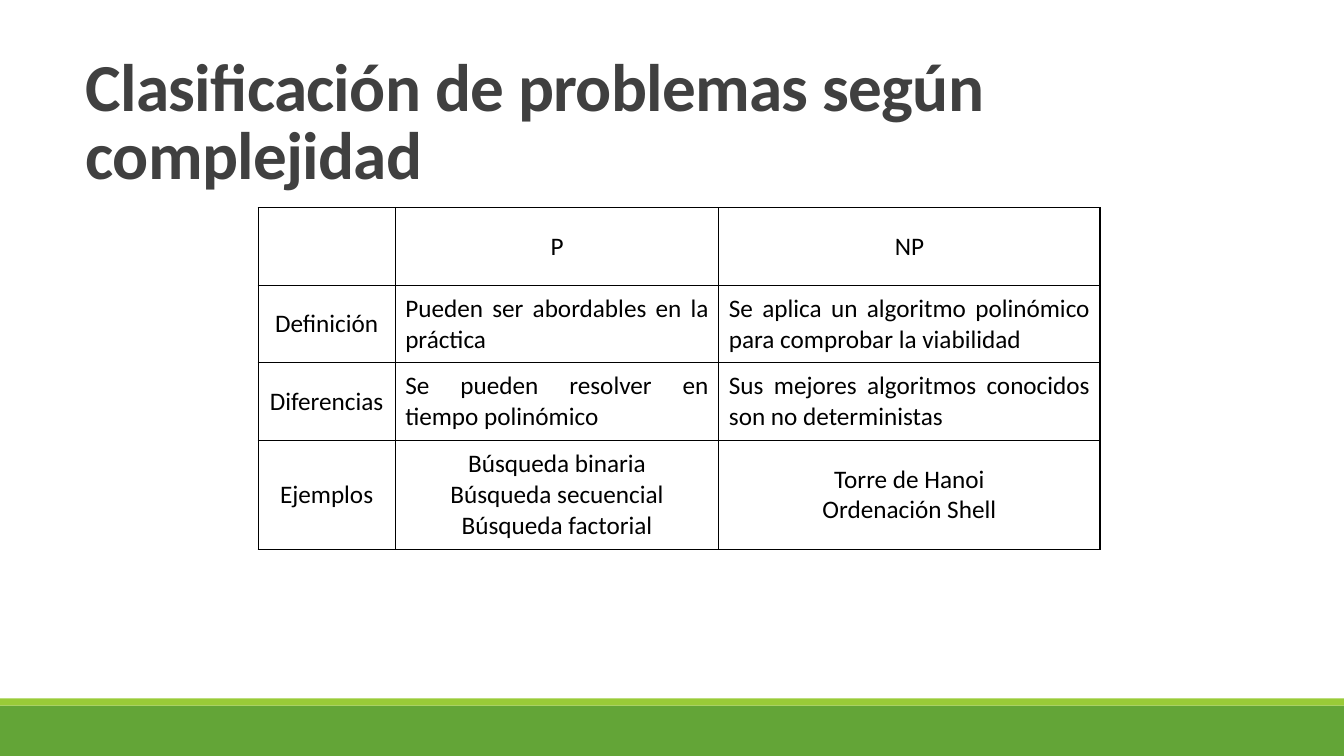
from lxml.etree import SubElement
from pptx import Presentation
from pptx.dml.color import RGBColor
from pptx.enum.shapes import MSO_SHAPE
from pptx.enum.text import MSO_ANCHOR, MSO_AUTO_SIZE, PP_ALIGN
from pptx.oxml.ns import qn
from pptx.util import Inches, Pt


def color(value):
    return RGBColor.from_string(value)


def add_borders(cell):
    properties = cell._tc.get_or_add_tcPr()
    for position, side in enumerate(("lnL", "lnR", "lnT", "lnB")):
        line = properties.makeelement(qn(f"a:{side}"), {"w": str(Pt(1))})
        fill = SubElement(line, qn("a:solidFill"))
        SubElement(fill, qn("a:srgbClr"), val="000000")
        properties.insert(position, line)


presentation = Presentation()
presentation.slide_width = Inches(13.33)
presentation.slide_height = Inches(7.5)
slide = presentation.slides.add_slide(presentation.slide_layouts[5])

for top, height, fill in ((7, 0.5, "63A537"), (6.93, 0.07, "99CB38")):
    bar = slide.shapes.add_shape(
        MSO_SHAPE.RECTANGLE, 0, Inches(top), presentation.slide_width, Inches(height)
    )
    bar.shadow.inherit = False
    bar.fill.solid()
    bar.fill.fore_color.rgb = color(fill)
    bar.line.fill.background()

title = slide.shapes.title
title.left, title.top = Inches(0.75), Inches(0.51)
title.width, title.height = Inches(11.97), Inches(0.84)
title_frame = title.text_frame
title_frame.text = "Clasificación de problemas según complejidad"
title_frame.word_wrap = True
title_frame.auto_size = MSO_AUTO_SIZE.NONE
title_frame.vertical_anchor = MSO_ANCHOR.TOP
paragraph = title_frame.paragraphs[0]
paragraph.alignment = PP_ALIGN.LEFT
paragraph.line_spacing = 0.85
run = paragraph.runs[0]
run.font.name = "Calibri"
run.font.size = Pt(48)
run.font.bold = True
run.font.color.rgb = color("404040")
run.font._element.set("spc", "-50")

rows = [
    ("", "P", "NP"),
    (
        "Definición",
        "Pueden ser abordables en la práctica",
        "Se aplica un algoritmo polinómico para comprobar la viabilidad",
    ),
    (
        "Diferencias",
        "Se pueden resolver en tiempo polinómico",
        "Sus mejores algoritmos conocidos son no deterministas",
    ),
    (
        "Ejemplos",
        "Búsqueda binaria\nBúsqueda secuencial\nBúsqueda factorial",
        "Torre de Hanoi\nOrdenación Shell",
    ),
]
column_widths = (1.36, 3.21, 3.78)
row_heights = (0.77, 0.77, 0.77, 1.08)

table = slide.shapes.add_table(
    len(rows), len(column_widths), Inches(2.56), Inches(2.06), Inches(8.35), Inches(3.39)
).table
table.first_row = False
table.horz_banding = False
for column, width in zip(table.columns, column_widths):
    column.width = Inches(width)

for row_index, (texts, height) in enumerate(zip(rows, row_heights)):
    table.rows[row_index].height = Inches(height)
    for column_index, text in enumerate(texts):
        cell = table.cell(row_index, column_index)
        cell.text_frame.text = text
        cell.vertical_anchor = MSO_ANCHOR.MIDDLE
        cell.fill.background()
        add_borders(cell)
        justified = column_index > 0 and row_index in (1, 2)
        for paragraph in cell.text_frame.paragraphs:
            paragraph.alignment = PP_ALIGN.JUSTIFY if justified else PP_ALIGN.CENTER
            for run in paragraph.runs:
                run.font.name = "Calibri"
                run.font.size = Pt(18)
                run.font.color.rgb = color("000000")

presentation.save("out.pptx")
